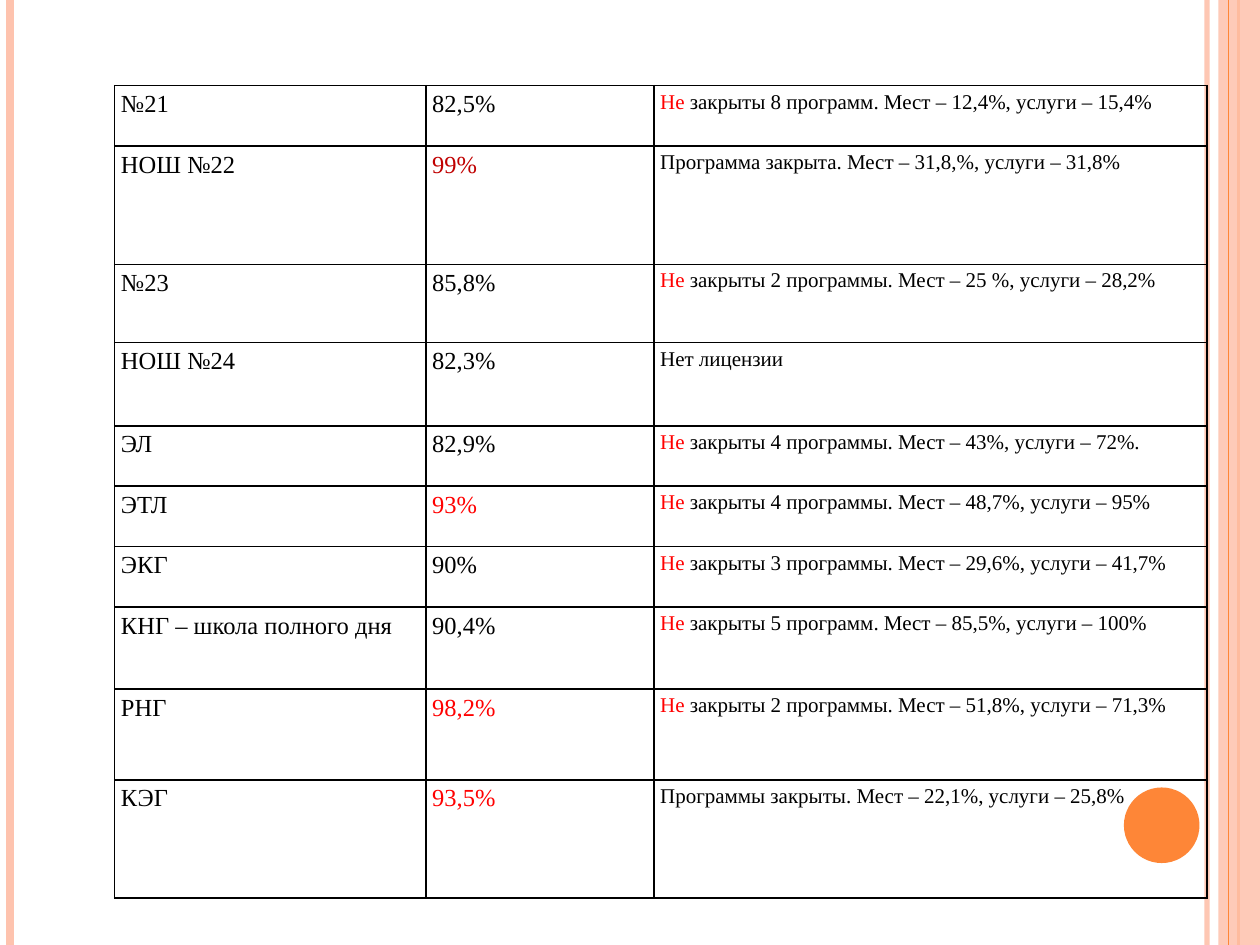
from lxml import etree
from pptx import Presentation
from pptx.dml.color import RGBColor
from pptx.enum.shapes import MSO_CONNECTOR, MSO_SHAPE
from pptx.oxml.ns import qn
from pptx.util import Inches, Pt

STRAIGHT = MSO_CONNECTOR.STRAIGHT
RECTANGLE = MSO_SHAPE.RECTANGLE
OVAL = MSO_SHAPE.OVAL

WIDTH, HEIGHT = 10, 7.5
PEACH, ORANGE = "FEC3AE", "FE8637"
BLACK, RED, DARK_RED = "000000", "FF0000", "C00000"
NOT_CLOSED = "Не"


def rgb(value):
    return RGBColor.from_string(value)


def set_alpha(color_parent, percent):
    """Make the solid colour below color_parent partly transparent."""
    color = color_parent.find(".//" + qn("a:srgbClr"))
    etree.SubElement(color, qn("a:alpha"), val=str(percent * 1000))


class SlideBuilder:
    font = "Times New Roman"
    cell_format = {
        "margin_left": Inches(0.05),
        "margin_right": Inches(0.05),
        "margin_top": Inches(0.01),
        "margin_bottom": 0,
    }
    paragraph_format = {"line_spacing": 1.15, "space_after": Pt(10)}

    def __init__(self, slide):
        self.slide = slide

    def vertical_line(self, x, color, width, opacity=100):
        rule = self.slide.shapes.add_connector(
            STRAIGHT, Inches(x), 0, Inches(x), Inches(HEIGHT))
        rule.line.color.rgb = rgb(color)
        rule.line.width = Pt(width)
        properties = rule.line._get_or_add_ln().getparent()
        if opacity < 100:
            set_alpha(properties, opacity)
        etree.SubElement(properties, qn("a:effectLst"))

    def shape(self, kind, left, top, width, height, color, opacity=100):
        figure = self.slide.shapes.add_shape(
            kind, *map(Inches, (left, top, width, height)))
        figure.shadow.inherit = False
        figure.fill.solid()
        figure.fill.fore_color.rgb = rgb(color)
        figure.line.fill.background()
        if opacity < 100:
            set_alpha(figure.fill._xPr, opacity)

    def table(self, left, top, column_widths, row_heights, rows):
        """Each cell in rows is a pair: text size and a list of (text, colour)."""
        grid = self.slide.shapes.add_table(
            len(row_heights), len(column_widths), Inches(left), Inches(top),
            Inches(sum(column_widths)), Inches(sum(row_heights))).table
        grid.first_row = grid.horz_banding = False
        for column, width in zip(grid.columns, column_widths):
            column.width = Inches(width)
        for row, height, contents in zip(grid.rows, row_heights, rows):
            row.height = Inches(height)
            for cell, (size, pieces) in zip(row.cells, contents):
                self.cell(cell, size, pieces)

    def cell(self, cell, size, pieces):
        for name, value in self.cell_format.items():
            setattr(cell, name, value)
        self.borders(cell)
        cell.fill.background()
        paragraph = cell.text_frame.paragraphs[0]
        for name, value in self.paragraph_format.items():
            setattr(paragraph, name, value)
        for text, color in pieces:
            run = paragraph.add_run()
            run.text = text
            run.font.name = self.font
            run.font.size = Pt(size)
            run.font.color.rgb = rgb(color)

    def borders(self, cell):
        properties = cell._tc.get_or_add_tcPr()
        for side in ("lnL", "lnR", "lnT", "lnB"):
            edge = etree.SubElement(properties, qn("a:" + side), w=str(Pt(1)))
            fill = etree.SubElement(edge, qn("a:solidFill"))
            etree.SubElement(fill, qn("a:srgbClr"), val=BLACK)


def school_row(school, share, share_color, licence):
    if licence.startswith(NOT_CLOSED + " "):
        remark = [(NOT_CLOSED, RED), (licence[len(NOT_CLOSED):], BLACK)]
    else:
        remark = [(licence, BLACK)]
    return [(14, [(school, BLACK)]), (14, [(share, share_color)]), (12, remark)]


SCHOOLS = [
    ("№21", "82,5%", BLACK, "Не закрыты 8 программ. Мест – 12,4%, услуги – 15,4%"),
    ("НОШ №22", "99%", DARK_RED, "Программа закрыта. Мест – 31,8,%, услуги – 31,8%"),
    ("№23", "85,8%", BLACK, "Не закрыты 2 программы. Мест – 25 %, услуги – 28,2%"),
    ("НОШ №24", "82,3%", BLACK, "Нет лицензии"),
    ("ЭЛ", "82,9%", BLACK, "Не закрыты 4 программы. Мест – 43%, услуги – 72%."),
    ("ЭТЛ", "93%", RED, "Не закрыты 4 программы. Мест – 48,7%, услуги – 95%"),
    ("ЭКГ", "90%", BLACK, "Не закрыты 3 программы. Мест – 29,6%, услуги – 41,7%"),
    ("КНГ – школа полного дня", "90,4%", BLACK,
     "Не закрыты 5 программ. Мест – 85,5%, услуги – 100%"),
    ("РНГ", "98,2%", RED, "Не закрыты 2 программы. Мест – 51,8%, услуги – 71,3%"),
    ("КЭГ", "93,5%", RED, "Программы закрыты. Мест – 22,1%, услуги – 25,8%"),
]
COLUMN_WIDTHS = [2.47, 1.81, 4.39]
ROW_HEIGHTS = [0.48, 0.94, 0.62, 0.66, 0.48, 0.48, 0.48, 0.65, 0.72, 0.94]


def main():
    presentation = Presentation()
    presentation.slide_width = Inches(WIDTH)
    presentation.slide_height = Inches(HEIGHT)
    blank_layout = presentation.slide_layouts[6]
    builder = SlideBuilder(presentation.slides.add_slide(blank_layout))

    builder.vertical_line(9.58, PEACH, 3, opacity=93)
    builder.vertical_line(0.08, PEACH, 4.5)
    builder.vertical_line(9.83, ORANGE, 1.5)
    builder.shape(RECTANGLE, 9.67, 0, 0.33, HEIGHT, PEACH, opacity=87)
    builder.vertical_line(9.75, ORANGE, 0.75)
    builder.shape(OVAL, 8.92, 6.25, 0.6, 0.6, ORANGE)
    builder.table(0.91, 0.68, COLUMN_WIDTHS, ROW_HEIGHTS,
                  [school_row(*school) for school in SCHOOLS])

    presentation.save("out.pptx")


if __name__ == "__main__":
    main()
